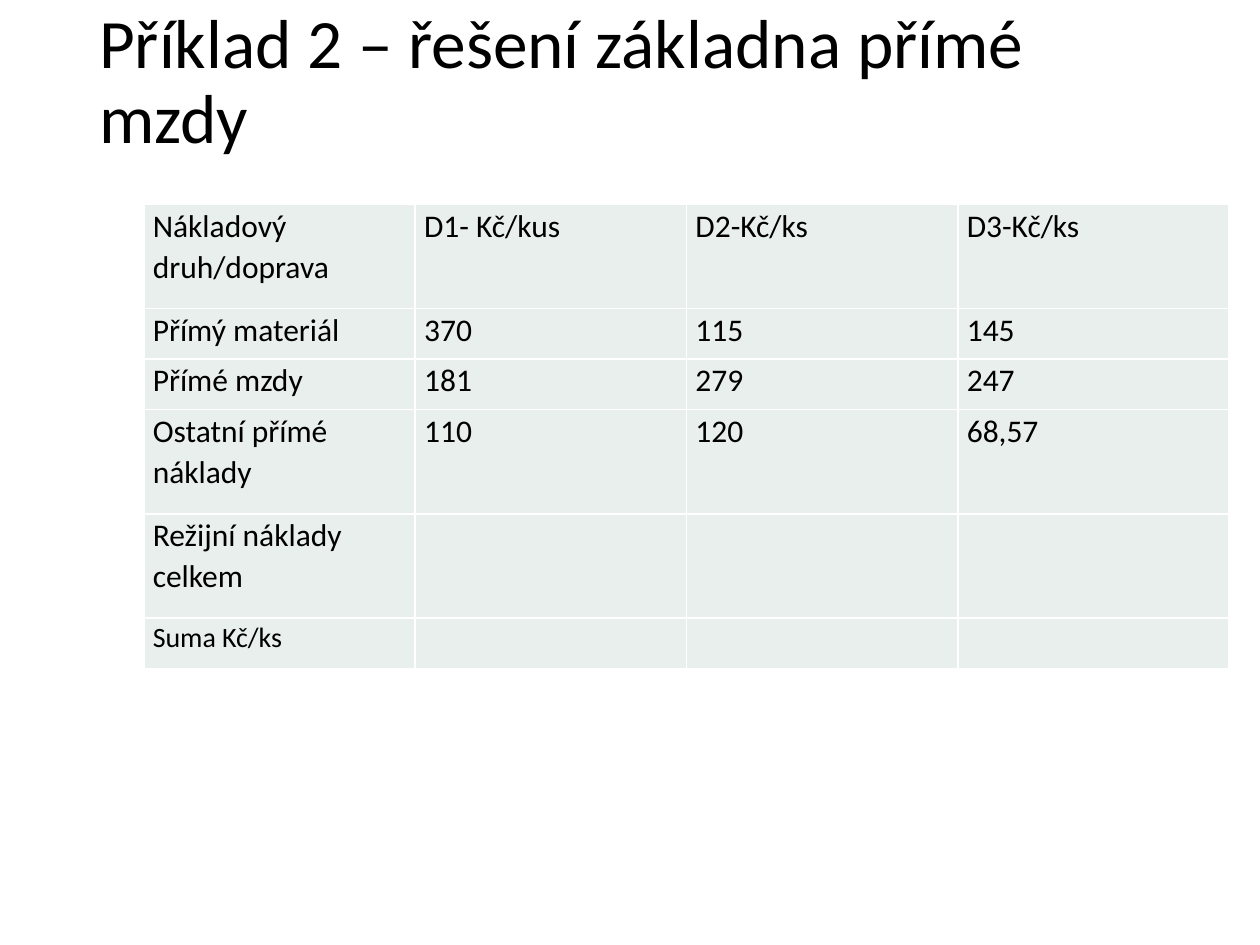
from lxml.etree import SubElement
from pptx import Presentation
from pptx.dml.color import RGBColor
from pptx.enum.text import MSO_ANCHOR
from pptx.oxml.ns import qn
from pptx.util import Cm, Pt

FONT = "Calibri"
BLACK = RGBColor(0x00, 0x00, 0x00)
WHITE = RGBColor(0xFF, 0xFF, 0xFF)
PALE_GREEN = RGBColor(0xE8, 0xEF, 0xEC)

COSTS = [
    ("Nákladový druh/doprava", "D1- Kč/kus", "D2-Kč/ks", "D3-Kč/ks"),
    ("Přímý materiál", "370", "115", "145"),
    ("Přímé mzdy", "181", "279", "247"),
    ("Ostatní přímé náklady", "110", "120", "68,57"),
    ("Režijní náklady celkem", "", "", ""),
    ("Suma Kč/ks", "", "", ""),
]
TALL, LOW = Cm(2.1), Cm(1.02)
ROW_HEIGHTS = [TALL, LOW, LOW, TALL, TALL, LOW]
COL_WIDTH = Cm(5.47)


def format_text(tf, size, spacing):
    """Apply font and line spacing to the text of a frame."""
    for p in tf.paragraphs:
        p.line_spacing = spacing
        for r in p.runs:
            r.font.name = FONT
            r.font.size = Pt(size)
            r.font.color.rgb = BLACK


def add_title(slide, text):
    """Add the slide title as a vertically centred text box."""
    sp = slide.shapes.add_textbox(Cm(1.75), Cm(1.02), Cm(21.9), Cm(1.32))
    tf = sp.text_frame
    tf.word_wrap = True
    tf.vertical_anchor = MSO_ANCHOR.MIDDLE
    tf.text = text
    format_text(tf, 39.6, 0.9)


def set_borders(cell, color, width):
    """Draw all four borders of a table cell."""
    tc_pr = cell._tc.get_or_add_tcPr()
    for side in ("a:lnL", "a:lnR", "a:lnT", "a:lnB"):
        ln = SubElement(tc_pr, qn(side), w=str(width))
        fill = SubElement(ln, qn("a:solidFill"))
        SubElement(fill, qn("a:srgbClr"), val=str(color))


def fill_cell(cell, text, size):
    """Set the text, margins, borders and fill of a table cell."""
    cell.text = text
    cell.margin_left = cell.margin_right = Cm(0.18)
    cell.margin_top = cell.margin_bottom = 0
    format_text(cell.text_frame, size, 1.07)
    set_borders(cell, WHITE, Pt(1))
    cell.fill.solid()
    cell.fill.fore_color.rgb = PALE_GREEN


def add_cost_table(slide, rows):
    """Add the cost table with a smaller label in the total row."""
    n_cols = len(rows[0])
    table = slide.shapes.add_table(
        len(rows), n_cols, Cm(2.9), Cm(4.12), COL_WIDTH * n_cols, sum(ROW_HEIGHTS)
    ).table
    for col in table.columns:
        col.width = COL_WIDTH
    for i, (row, height) in enumerate(zip(rows, ROW_HEIGHTS)):
        table.rows[i].height = height
        size = 16 if row is rows[-1] else 18
        for j, text in enumerate(row):
            fill_cell(table.cell(i, j), text, size)


def main():
    """Build and save the slide."""
    prs = Presentation()
    prs.slide_width, prs.slide_height = Cm(25.4), Cm(19.05)
    s = prs.slides.add_slide(prs.slide_layouts[6])
    add_title(s, "Příklad 2 – řešení základna přímé mzdy")
    add_cost_table(s, COSTS)
    prs.save("out.pptx")


if __name__ == "__main__":
    main()
